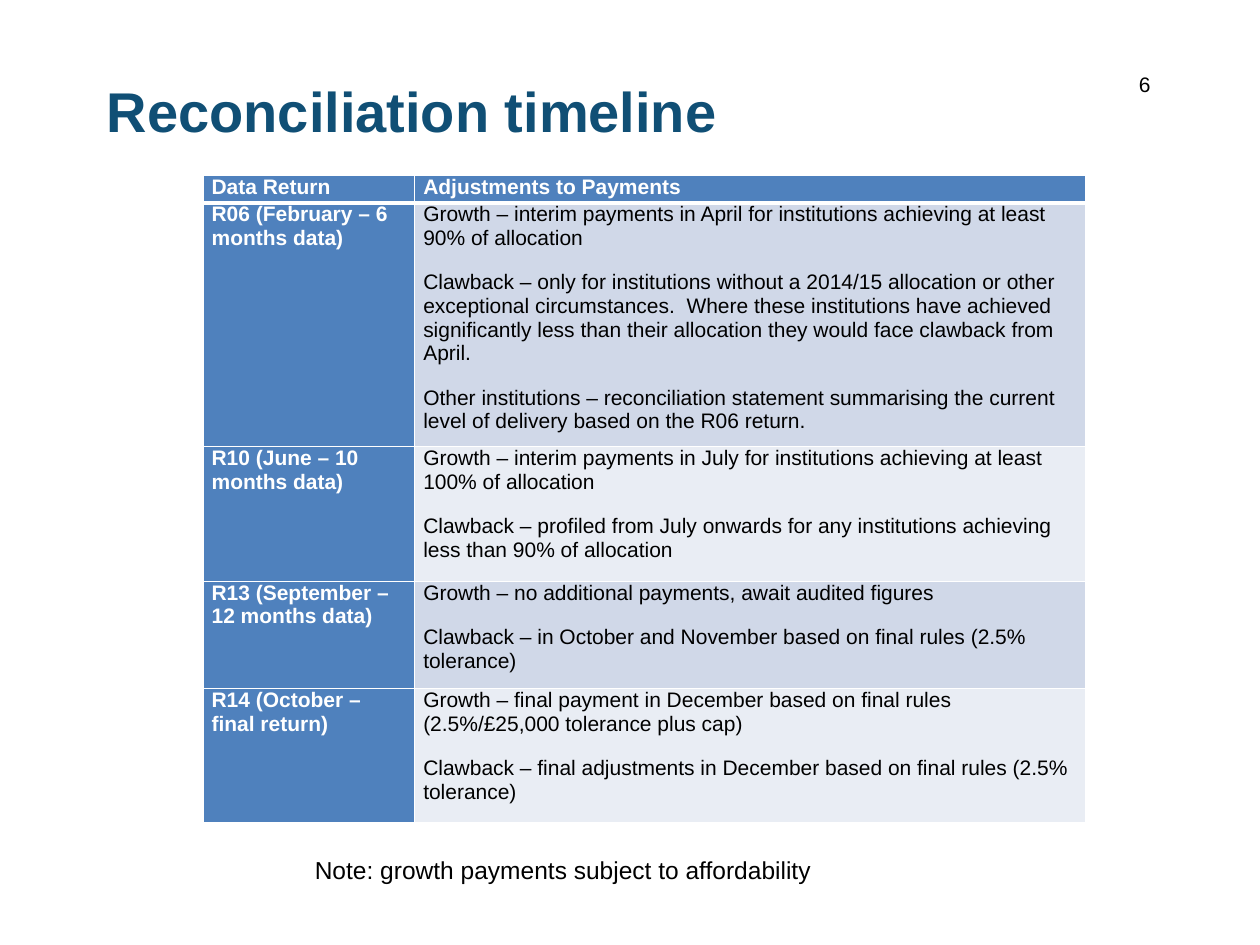
from pptx import Presentation
from pptx.dml.color import RGBColor
from pptx.enum.text import MSO_ANCHOR
from pptx.oxml import parse_xml
from pptx.oxml.ns import nsdecls
from pptx.util import Emu, Inches, Pt

TOP, MIDDLE = MSO_ANCHOR.TOP, MSO_ANCHOR.MIDDLE
COLUMNS, ROWS = 100, 75

TIMELINE = [
    ("Data Return", ["Adjustments to Payments"]),
    ("R06 (February – 6 months data)", [
        "Growth – interim payments in April for institutions achieving at least 90% of allocation",
        "Clawback – only for institutions without a 2014/15 allocation or other exceptional "
        "circumstances.  Where these institutions have achieved significantly less than their "
        "allocation they would face clawback from April.",
        "Other institutions – reconciliation statement summarising the current level of delivery "
        "based on the R06 return."]),
    ("R10 (June – 10 months data)", [
        "Growth – interim payments in July for institutions achieving at least 100% of allocation",
        "Clawback – profiled from July onwards for any institutions achieving less than 90% of "
        "allocation"]),
    ("R13 (September – 12 months data)", [
        "Growth – no additional payments, await audited figures",
        "Clawback – in October and November based on final rules (2.5% tolerance)"]),
    ("R14 (October – final return)", [
        "Growth – final payment in December based on final rules (2.5%/£25,000 tolerance plus cap)",
        "Clawback – final adjustments in December based on final rules (2.5% tolerance)"]),
]


def rgb(value):
    return RGBColor.from_string(value)


def write(tf, paragraphs, size=12, color="000000", bold=False, font="Arial", gap=0):
    """Fill a text frame; gap is the space on each side of a paragraph, in points."""
    tf.word_wrap = True
    for i, text in enumerate(paragraphs):
        p = tf.paragraphs[0] if i == 0 else tf.add_paragraph()
        p.space_before, p.space_after = Pt(gap if i else 0), Pt(gap)
        r = p.add_run()
        r.text = text
        r.font.name, r.font.size, r.font.bold = font, Pt(size), bold
        r.font.color.rgb = rgb(color)


class Deck:
    title_color, header_fill, line = "104F75", "4F81BD", "FFFFFF"
    bands = ("E9EDF4", "D0D8E8")

    def __init__(self):
        self.prs = Presentation()
        self.prs.slide_width, self.prs.slide_height = Inches(10), Inches(7.5)
        self.s = self.prs.slides.add_slide(self.prs.slide_layouts[6])

    def x(self, columns):
        return Emu(round(self.prs.slide_width * columns / COLUMNS))

    def y(self, rows):
        return Emu(round(self.prs.slide_height * rows / ROWS))

    def text(self, text, left, top, width, height, anchor=TOP, **style):
        sp = self.s.shapes.add_textbox(
            self.x(left), self.y(top), self.x(width), self.y(height))
        sp.text_frame.vertical_anchor = anchor
        write(sp.text_frame, [text], **style)

    def borders(self, cell, **widths):
        """Draw the four cell edges, 1 pt unless a width is given for L, R, T or B."""
        tc_pr = cell._tc.get_or_add_tcPr()
        for side in "LRTB":
            tc_pr.append(parse_xml(
                f'<a:ln{side} {nsdecls("a")} w="{Pt(widths.get(side, 1))}"><a:solidFill>'
                f'<a:srgbClr val="{self.line}"/></a:solidFill></a:ln{side}>'))

    def cell(self, cell, paragraphs, fill, heading, **widths):
        cell.margin_left = cell.margin_right = self.x(0.7)
        cell.margin_top = cell.margin_bottom = 0
        self.borders(cell, **widths)
        cell.fill.solid()
        cell.fill.fore_color.rgb = rgb(fill)
        write(cell.text_frame, paragraphs, gap=6, bold=heading,
              color="FFFFFF" if heading else "000000")

    def table(self, data, left, top, widths, heights):
        table = self.s.shapes.add_table(
            len(data), len(widths), self.x(left), self.y(top),
            self.x(sum(widths)), self.y(sum(heights))).table
        table.horz_banding = False
        for column, width in zip(table.columns, widths):
            column.width = self.x(width)
        for i, (label, details) in enumerate(data):
            table.rows[i].height = self.y(heights[i])
            rule = {0: {"B": 3}, 1: {"T": 3}}.get(i, {})
            fill = self.bands[i % 2] if i else self.header_fill
            self.cell(table.cell(i, 0), [label], self.header_fill, True, **rule)
            self.cell(table.cell(i, 1), details, fill, i == 0, **rule)


def main():
    deck = Deck()
    deck.text("Reconciliation timeline", 7.5, 3.6, 80.3, 10.2, anchor=MIDDLE,
              size=32, color=deck.title_color, bold=True)
    deck.text("6", 8.94 * 10, 5.2, 3.9, 3)
    deck.table(TIMELINE, 16.1, 13.9, [16.8, 53.3], [2.2, 19.1, 10.7, 8.5, 10.7])
    deck.text("Note: growth payments subject to affordability", 24, 67.4, 52.8, 3.4, size=14)
    deck.prs.save("out.pptx")


if __name__ == "__main__":
    main()
